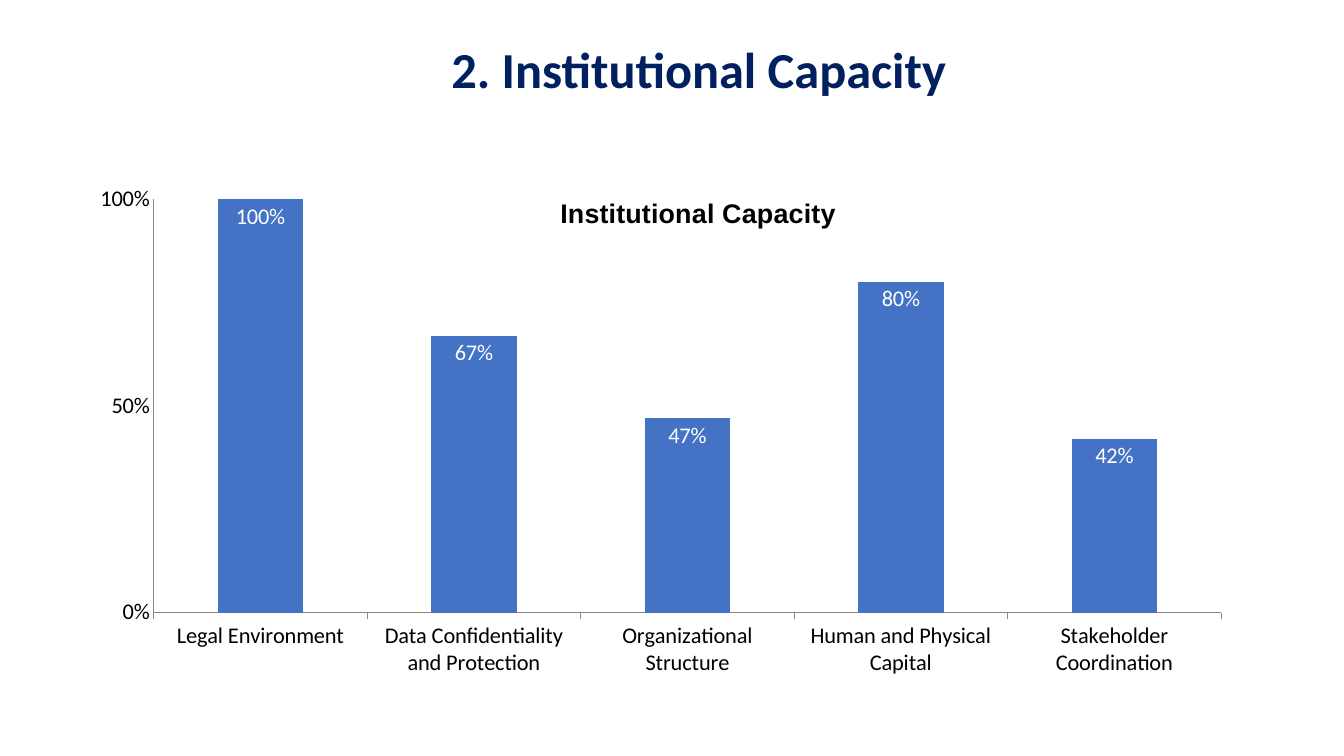
import lxml.etree
import pptx
import pptx.chart.data
import pptx.dml.color
import pptx.enum.chart
import pptx.enum.text
import pptx.oxml.ns
import pptx.util

NAVY = pptx.dml.color.RGBColor(0x00, 0x20, 0x60)
BLUE = pptx.dml.color.RGBColor(0x44, 0x72, 0xC4)
GREY = pptx.dml.color.RGBColor(0x86, 0x86, 0x86)
BLACK = pptx.dml.color.RGBColor(0x00, 0x00, 0x00)
WHITE = pptx.dml.color.RGBColor(0xFF, 0xFF, 0xFF)

CAPACITY = {
    "Legal Environment": 1,
    "Data Confidentiality and Protection": 0.67,
    "Organizational Structure": 0.47,
    "Human and Physical Capital": 0.8,
    "Stakeholder Coordination": 0.42,
}


def place(part, position, **shares):
    """Fix a chart part at shares of the chart's size."""
    qn = pptx.oxml.ns.qn
    for automatic in part.findall(qn("c:layout")):
        part.remove(automatic)
    layout = lxml.etree.Element(qn("c:layout"))
    manual = lxml.etree.SubElement(layout, qn("c:manualLayout"))
    for tag, value in shares.items():
        lxml.etree.SubElement(manual, qn(f"c:{tag}")).set("val", str(value))
    part.insert(position, layout)


class CapacitySlide:
    body_font = "Calibri"
    heading_font = "Arial"

    def __init__(self, deck):
        self.width, self.height = deck.slide_width, deck.slide_height
        self.slide = deck.slides.add_slide(deck.slide_layouts[5])

    def box(self, left, top, width, height):
        """Turn shares of the slide's size into lengths."""
        return (round(left * self.width), round(top * self.height),
                round(width * self.width), round(height * self.height))

    def style(self, font, size, colour, bold=False, name=None):
        font.name = name or self.body_font
        font.size = pptx.util.Pt(size)
        font.bold = bold
        font.color.rgb = colour

    def title(self, text, *shares):
        heading = self.slide.shapes.title
        heading.left, heading.top, heading.width, heading.height = self.box(*shares)
        heading.text_frame.text = text
        heading.text_frame.vertical_anchor = pptx.enum.text.MSO_ANCHOR.MIDDLE
        line = heading.text_frame.paragraphs[0]
        line.alignment = pptx.enum.text.PP_ALIGN.CENTER
        line.line_spacing = 0.9
        self.style(line.runs[0].font, 36, NAVY, bold=True)

    def column_chart(self, caption, values, *shares):
        data = pptx.chart.data.CategoryChartData(number_format="0%")
        data.categories = list(values)
        data.add_series("Series 1", list(values.values()))
        chart = self.slide.shapes.add_chart(
            pptx.enum.chart.XL_CHART_TYPE.COLUMN_CLUSTERED,
            *self.box(*shares), data).chart
        chart.has_legend = False
        self.style(chart.font, 16, BLACK)

        # Caption laid over the columns
        chart.has_title = True
        chart.chart_title.text_frame.text = caption
        run = chart.chart_title.text_frame.paragraphs[0].runs[0]
        self.style(run.font, 19.2, BLACK, bold=True, name=self.heading_font)
        place(chart.chart_title._element, 1,
              xMode="edge", yMode="edge", x=0.41, y=0.14)
        place(chart._chartSpace.chart.plotArea, 0, layoutTarget="inner",
              xMode="edge", yMode="edge", x=0.066, y=0.156, w=0.914, h=0.713)

        # Axes
        tick = pptx.enum.chart.XL_TICK_MARK
        for axis, mark in ((chart.category_axis, tick.OUTSIDE),
                           (chart.value_axis, tick.NONE)):
            axis.has_major_gridlines = False
            axis.major_tick_mark = mark
            axis.minor_tick_mark = tick.NONE
            axis.format.line.color.rgb = GREY
            axis.format.line.width = pptx.util.Pt(0.75)
            self.style(axis.tick_labels.font, 16, BLACK)
        percent = chart.value_axis
        percent.minimum_scale, percent.maximum_scale = 0, 1
        percent.major_unit = 0.5
        percent.tick_labels.number_format = "0%"
        percent.tick_labels.number_format_is_linked = False

        # Columns and their labels
        plot = chart.plots[0]
        plot.gap_width = 150
        plot.vary_by_categories = False
        columns = plot.series[0]
        columns.format.fill.solid()
        columns.format.fill.fore_color.rgb = BLUE
        labels = columns.data_labels
        labels.show_value = True
        labels.number_format = "0%"
        labels.number_format_is_linked = False
        labels.position = pptx.enum.chart.XL_LABEL_POSITION.INSIDE_END
        self.style(labels.font, 16, WHITE)


def main():
    deck = pptx.Presentation()
    deck.slide_width = pptx.util.Inches(13.33)
    deck.slide_height = pptx.util.Inches(7.5)
    page = CapacitySlide(deck)
    page.title("2. Institutional Capacity", 0.126, 0.027, 0.788, 0.137)
    page.column_chart("Institutional Capacity", CAPACITY,
                      0.057, 0.144, 0.869, 0.767)
    deck.save("out.pptx")


if __name__ == "__main__":
    main()
